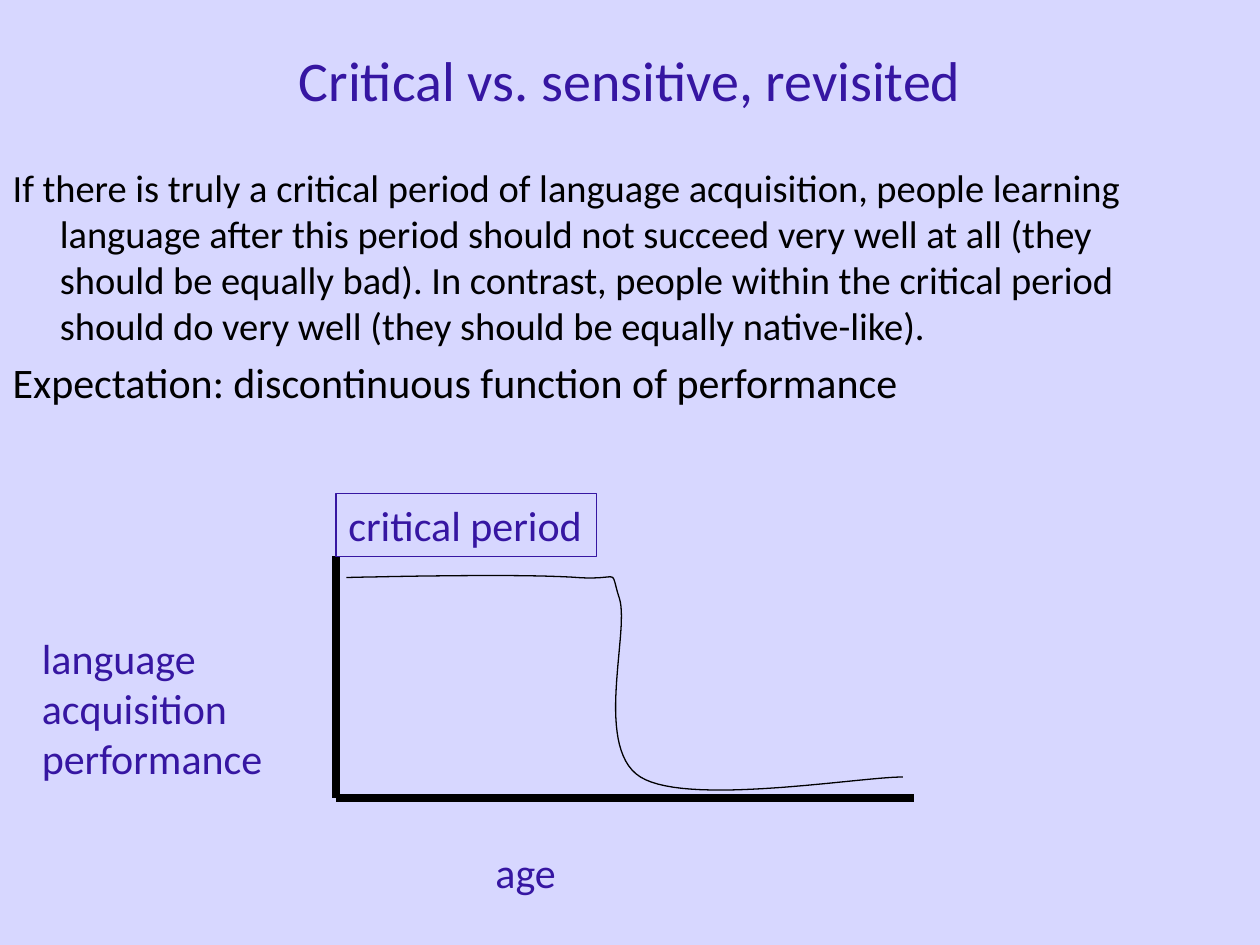
from dataclasses import dataclass
from typing import Sequence

import pptx
import pptx.dml.color
import pptx.enum.shapes
import pptx.enum.text
import pptx.oxml
import pptx.util

COLUMNS, ROWS = 120, 90
FONT = "Calibri"
BACKGROUND, ACCENT, BLACK = "D7D7FF", "3616A2", "000000"
CURVE_STEPS = 30

Point = tuple[float, float]


@dataclass(frozen=True)
class Label:
    """Graph text, placed in grid columns and rows."""
    lines: Sequence[str]
    column: float
    row: float
    columns: float
    rows: float
    wrap: bool = False
    framed: bool = False


@dataclass(frozen=True)
class Axis:
    start: Point
    end: Point


@dataclass(frozen=True)
class Statement:
    text: str
    size: float


STATEMENTS = (
    Statement("If there is truly a critical period of language acquisition, people "
              "learning language after this period should not succeed very well at all "
              "(they should be equally bad). In contrast, people within the critical "
              "period should do very well (they should be equally native-like).", 22),
    Statement("Expectation: discontinuous function of performance", 24),
)
ORIGIN = (32, 76)
AXES = (Axis((32, 53), ORIGIN), Axis((87, 76), ORIGIN))
LABELS = (
    Label(("language acquisition", "performance"), 2.8, 59.6, 27.2, 15.7, wrap=True),
    Label(("age",), 46, 80, 8.3, 6),
    Label(("critical period",), 32, 47, 24.8, 6, framed=True),
)
CURVE_START = (33, 55)
# Each segment: two control points, then the end point.
CURVE_SEGMENTS = (
    ((41.9, 54.8), (50.6, 54.7), (55, 55)),
    ((59.3, 55.3), (58, 53.9), (59, 57)),
    ((60, 60.1), (56.5, 71.2), (61, 74)),
    ((65.5, 76.8), (81.8, 74), (86, 74)),
)

presentation = pptx.Presentation()
presentation.slide_width = pptx.util.Inches(10)
presentation.slide_height = pptx.util.Inches(7.5)


def across(columns: float) -> int:
    return round(presentation.slide_width * columns / COLUMNS)


def down(rows: float) -> int:
    return round(presentation.slide_height * rows / ROWS)


def place(shape, column: float, row: float, columns: float, rows: float) -> None:
    shape.left, shape.top = across(column), down(row)
    shape.width, shape.height = across(columns), down(rows)


def colour(hex_string: str) -> pptx.dml.color.RGBColor:
    return pptx.dml.color.RGBColor.from_string(hex_string)


def style_line(line, hex_string: str, width: float) -> None:
    line.color.rgb = colour(hex_string)
    line.width = pptx.util.Pt(width)


def add_run(paragraph, text: str, size: float, hex_string: str) -> None:
    run = paragraph.add_run()
    run.text = text
    run.font.name = FONT
    run.font.size = pptx.util.Pt(size)
    run.font.color.rgb = colour(hex_string)


def next_paragraph(frame, index: int):
    return frame.paragraphs[0] if index == 0 else frame.add_paragraph()


def fill_title(title) -> None:
    place(title, 9, 0, 102, 15)
    frame = title.text_frame
    frame.auto_size = pptx.enum.text.MSO_AUTO_SIZE.NONE
    frame.vertical_anchor = pptx.enum.text.MSO_ANCHOR.MIDDLE
    frame.paragraphs[0].alignment = pptx.enum.text.PP_ALIGN.CENTER
    add_run(frame.paragraphs[0], "Critical vs. sensitive, revisited", 32, ACCENT)


def fill_body(body) -> None:
    place(body, 0, 15, 114, 54)
    frame = body.text_frame
    frame.auto_size = pptx.enum.text.MSO_AUTO_SIZE.NONE
    hanging = across(4.5)
    for index, statement in enumerate(STATEMENTS):
        paragraph = next_paragraph(frame, index)
        paragraph.space_before = pptx.util.Pt(0.2 * statement.size)
        add_run(paragraph, statement.text, statement.size, BLACK)
        properties = paragraph._p.get_or_add_pPr()
        properties.set("marL", str(hanging))
        properties.set("indent", str(-hanging))
        properties.append(pptx.oxml.xmlchemy.OxmlElement("a:buNone"))


def draw_axis(shapes, axis: Axis) -> None:
    (x1, y1), (x2, y2) = axis.start, axis.end
    connector = shapes.add_connector(
        pptx.enum.shapes.MSO_CONNECTOR.STRAIGHT,
        across(x1), down(y1), across(x2), down(y2))
    style_line(connector.line, BLACK, 5)
    connector._element.spPr.append(pptx.oxml.xmlchemy.OxmlElement("a:effectLst"))


def draw_label(shapes, label: Label) -> None:
    box = (across(label.column), down(label.row),
           across(label.columns), down(label.rows))
    if label.framed:
        shape = shapes.add_shape(pptx.enum.shapes.MSO_SHAPE.RECTANGLE, *box)
        shape.shadow.inherit = False
        shape.fill.background()
        style_line(shape.line, ACCENT, 0.75)
    else:
        shape = shapes.add_textbox(*box)
    frame = shape.text_frame
    frame.word_wrap = label.wrap
    frame.auto_size = pptx.enum.text.MSO_AUTO_SIZE.SHAPE_TO_FIT_TEXT
    frame.vertical_anchor = pptx.enum.text.MSO_ANCHOR.TOP
    for index, text in enumerate(label.lines):
        paragraph = next_paragraph(frame, index)
        paragraph.alignment = pptx.enum.text.PP_ALIGN.LEFT
        add_run(paragraph, text, 24, ACCENT)


def bezier(points: Sequence[Point], t: float) -> Point:
    weights = ((1 - t) ** 3, 3 * t * (1 - t) ** 2, 3 * t ** 2 * (1 - t), t ** 3)
    x, y = (sum(w * p[axis] for w, p in zip(weights, points)) for axis in (0, 1))
    return across(x), down(y)


def draw_curve(shapes) -> None:
    vertices, start = [], CURVE_START
    for segment in CURVE_SEGMENTS:
        vertices += [bezier((start, *segment), step / CURVE_STEPS)
                     for step in range(1, CURVE_STEPS + 1)]
        start = segment[-1]
    builder = shapes.build_freeform(across(CURVE_START[0]), down(CURVE_START[1]))
    builder.add_line_segments(vertices, close=False)
    curve = builder.convert_to_shape()
    curve.shadow.inherit = False
    curve.fill.background()
    style_line(curve.line, BLACK, 0.75)


def main() -> None:
    slide = presentation.slides.add_slide(presentation.slide_layouts[1])
    slide.background.fill.solid()
    slide.background.fill.fore_color.rgb = colour(BACKGROUND)
    fill_title(slide.shapes.title)
    fill_body(slide.placeholders[1])
    for axis in AXES:
        draw_axis(slide.shapes, axis)
    draw_curve(slide.shapes)
    for label in LABELS:
        draw_label(slide.shapes, label)
    presentation.save("out.pptx")


if __name__ == "__main__":
    main()
